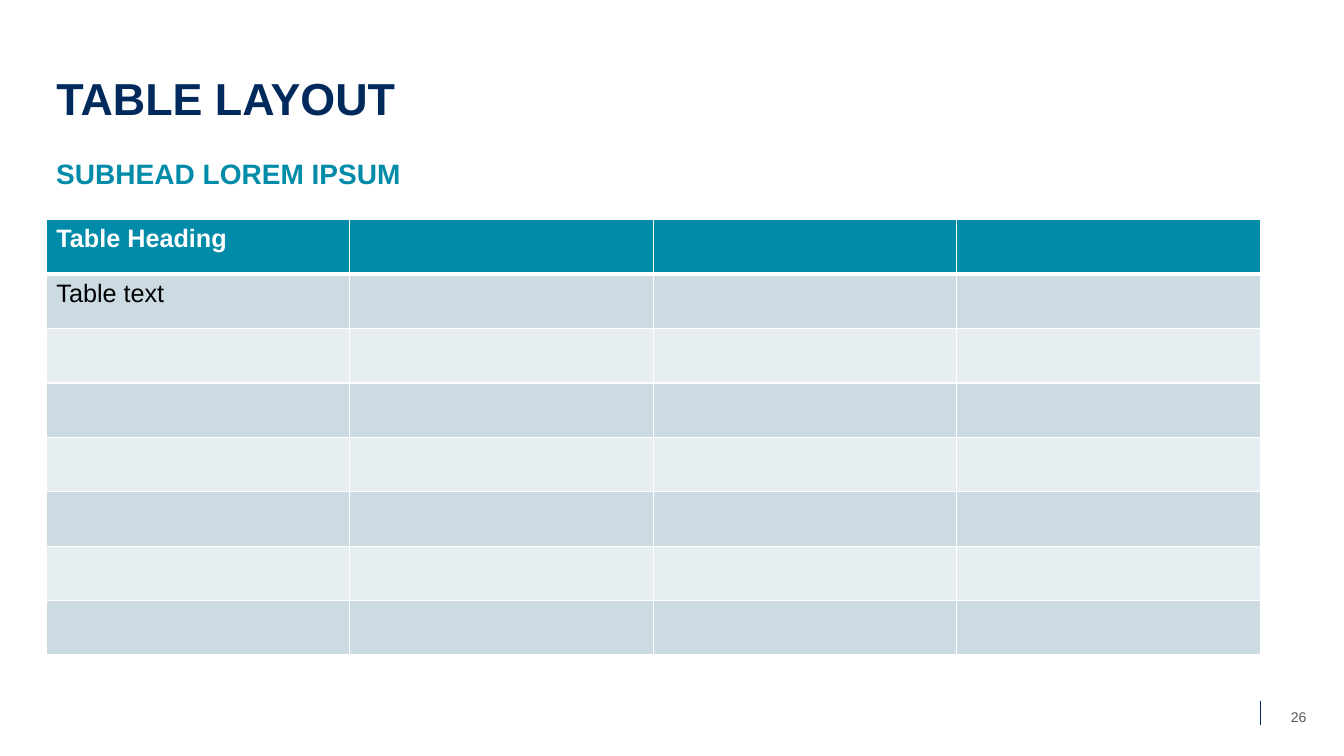
from lxml.etree import SubElement
from pptx import Presentation
from pptx.dml.color import RGBColor
from pptx.enum.shapes import MSO_CONNECTOR
from pptx.enum.text import MSO_ANCHOR, PP_ALIGN
from pptx.oxml.ns import qn
from pptx.util import Inches, Pt

TITLE = "TABLE LAYOUT"
SUBHEAD = "SUBHEAD LOREM IPSUM"
PAGE = "26"
ROWS = [["Table Heading", "", "", ""], ["Table text", "", "", ""]] + [[""] * 4] * 6

COLORS = {"navy": "002A5C", "teal": "008BA9", "dark": "CCDAE2", "light": "E7EEF1",
          "white": "FFFFFF", "black": "000000", "gray": "595959"}
LEFT, TOP = 0.46, 2.18
COL_W, ROW_H = 3.01, 0.54


def color(name):
    return RGBColor.from_string(COLORS[name])


def write(frame, text, size=18, tint="black", bold=False, align=PP_ALIGN.LEFT,
          anchor=MSO_ANCHOR.TOP, spacing=None):
    frame.word_wrap = True
    frame.vertical_anchor = anchor
    para = frame.paragraphs[0]
    para.alignment = align
    para.line_spacing = spacing
    run = para.add_run()
    run.text = text
    font = run.font
    font.name, font.size, font.bold = "Arial", Pt(size), bold
    font.color.rgb = color(tint)


def border(cell, side, width):
    line = SubElement(cell._tc.get_or_add_tcPr(), qn("a:ln" + side), w=str(Pt(width)))
    fill = SubElement(line, qn("a:solidFill"))
    SubElement(fill, qn("a:srgbClr"), val=COLORS["white"])


def place(shape, *box):
    shape.left, shape.top, shape.width, shape.height = map(Inches, box)


def main():
    deck = Presentation()
    deck.slide_width, deck.slide_height = Inches(13.33), Inches(7.5)
    slide = deck.slides.add_slide(deck.slide_layouts[5])
    shapes = slide.shapes

    # Title and subhead
    title = shapes.title
    place(title, LEFT, 0.33, 10.4, 0.96)
    write(title.text_frame, TITLE, size=32, tint="navy", bold=True,
          anchor=MSO_ANCHOR.BOTTOM, spacing=0.9)
    sub = shapes.add_textbox(*map(Inches, (LEFT, 1.51, 10.4, 0.46)))
    write(sub.text_frame, SUBHEAD, size=20, tint="teal", bold=True,
          anchor=MSO_ANCHOR.MIDDLE, spacing=0.9)

    # Table
    count = len(ROWS[0])
    box = (LEFT, TOP, COL_W * count, ROW_H * len(ROWS))
    table = shapes.add_table(len(ROWS), count, *map(Inches, box)).table
    for col in table.columns:
        col.width = Inches(COL_W)
    for r, texts in enumerate(ROWS):
        table.rows[r].height = Inches(ROW_H)
        head = r == 0
        back = "teal" if head else ("light", "dark")[r % 2]
        for c, text in enumerate(texts):
            cell = table.cell(r, c)
            for side in "LRTB":
                thick = (r, side) in ((0, "B"), (1, "T"))
                border(cell, side, 3 if thick else 1)
            cell.fill.solid()
            cell.fill.fore_color.rgb = color(back)
            if text:
                write(cell.text_frame, text, tint="white" if head else "black", bold=head)

    # Page number with its rule
    rule = shapes.add_connector(MSO_CONNECTOR.STRAIGHT,
                                *map(Inches, (12.5, 6.95, 12.5, 7.19)))
    rule.line.color.rgb = color("navy")
    rule.line.width = Pt(0.5)
    SubElement(rule._element.spPr, qn("a:effectLst"))
    page = shapes.add_textbox(*map(Inches, (12.64, 6.91, 0.48, 0.4)))
    write(page.text_frame, PAGE, size=10, tint="gray", align=PP_ALIGN.CENTER,
          anchor=MSO_ANCHOR.MIDDLE)

    deck.save("out.pptx")


if __name__ == "__main__":
    main()
